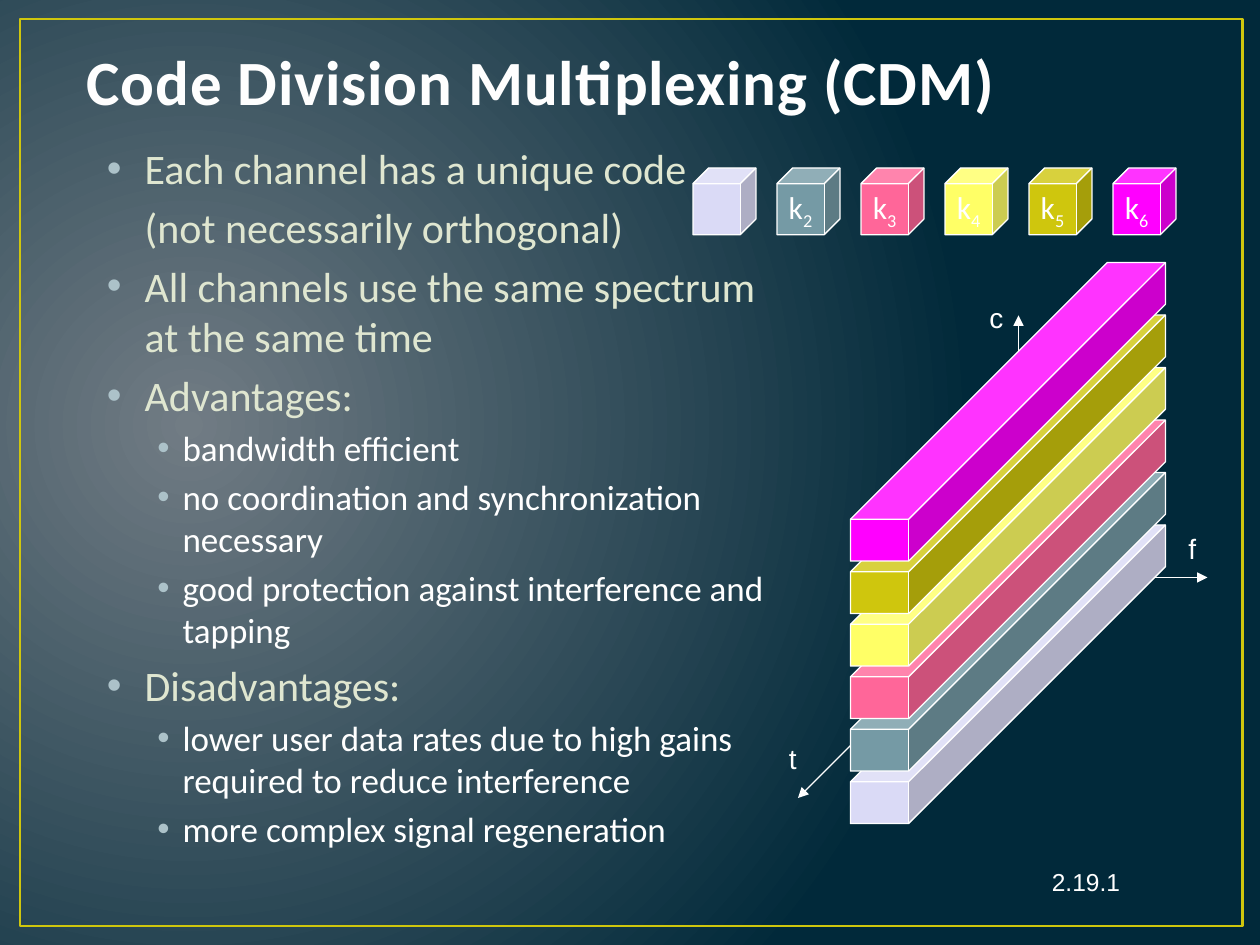
from pptx import Presentation
from pptx.dml.color import RGBColor
from pptx.enum.shapes import MSO_CONNECTOR, MSO_SHAPE
from pptx.enum.text import MSO_ANCHOR, MSO_AUTO_SIZE, PP_ALIGN
from pptx.oxml.ns import qn
from pptx.util import Inches, Pt
from lxml.etree import SubElement

WHITE, GOLD, PALE = "FFFFFF", "CFC60D", "DFE6D0"
CHANNELS = ["DADAF6", "759AA5", "FF6699", "FFFF66", GOLD, "FF00FF"]
# (level, bulleted, text)
POINTS = [
    (0, True, "Each channel has a unique code"),
    (0, False, "(not necessarily orthogonal)"),
    (0, True, "All channels use the same spectrum at the same time"),
    (0, True, "Advantages:"),
    (1, True, "bandwidth efficient"),
    (1, True, "no coordination and synchronization necessary"),
    (1, True, "good protection against interference and tapping"),
    (0, True, "Disadvantages:"),
    (1, True, "lower user data rates due to high gains required to reduce interference"),
    (1, True, "more complex signal regeneration"),
]
# (indent, hanging, size, colour) for each level
LEVELS = [(0.3, 0.3, 24, PALE), (0.6, 0.2, 20, WHITE)]


def color(value):
    return RGBColor.from_string(value)


def set_font(font, name, size, value):
    font.name, font.size = name, Pt(size)
    font.color.rgb = color(value)


def add_background(page):
    fill = page.background.fill
    fill.gradient()
    for stop, value in zip(fill.gradient_stops, ("717C84", "01293A")):
        stop.color.rgb = color(value)
    gradient = next(page.element.iter(qn("a:gradFill")))
    gradient.remove(gradient.find(qn("a:lin")))
    circle = SubElement(gradient, qn("a:path"), path="circle")
    SubElement(circle, qn("a:fillToRect"), l="15000", t="50000", r="85000", b="60000")


def add_frame(page, left, top, width, height):
    frame = page.shapes.add_shape(MSO_SHAPE.RECTANGLE, Inches(left), Inches(top),
                                  Inches(width), Inches(height))
    frame.shadow.inherit = False
    frame.fill.background()
    frame.line.color.rgb = color(GOLD)
    frame.line.width = Pt(1.5)


def add_title(page, left, top, width, height):
    box = page.shapes.add_textbox(Inches(left), Inches(top), Inches(width), Inches(height))
    box.text_frame.word_wrap = True
    box.text_frame.vertical_anchor = MSO_ANCHOR.BOTTOM
    para = box.text_frame.paragraphs[0]
    span = para.add_run()
    span.text = "Code Division Multiplexing (CDM)"
    set_font(span.font, "Calibri", 36, "FEFEFE")
    span.font.bold = True
    span.font._element.set("spc", "50")


def add_points(page, left, top, width, height):
    box = page.shapes.add_textbox(Inches(left), Inches(top), Inches(width), Inches(height))
    frame = box.text_frame
    frame.word_wrap = True
    for index, (level, bulleted, text) in enumerate(POINTS):
        para = frame.add_paragraph() if index else frame.paragraphs[0]
        indent, hanging, size, value = LEVELS[level]
        para.text, para.level = text, level
        if index:
            para.space_before = Pt(0.2 * size)
        props = para._p.get_or_add_pPr()
        props.set("marL", str(Inches(indent)))
        props.set("indent", str(-Inches(hanging) if bulleted else 0))
        if bulleted:
            bullet_color = SubElement(props, qn("a:buClr"))
            SubElement(bullet_color, qn("a:srgbClr"), val="ACC2C9")
            SubElement(props, qn("a:buFont"), typeface="Arial")
            SubElement(props, qn("a:buChar"), char="•")
        set_font(para.font, "Calibri", size, value)


def add_label(page, text, left, top, width, height, size):
    box = page.shapes.add_textbox(Inches(left), Inches(top), Inches(width), Inches(height))
    box.text_frame.word_wrap = False
    box.text_frame.auto_size = MSO_AUTO_SIZE.SHAPE_TO_FIT_TEXT
    para = box.text_frame.paragraphs[0]
    para.text = text
    set_font(para.font, "Arial", size, WHITE)


def add_axes(page, left, top):
    """Code, frequency and time axes meeting at (left, top)."""
    axes = [("t", -1.75, 1.75, -1.92, 1.25, 0.26),
            ("c", 0, -2.08, -0.33, -2.25, 0.31),
            ("f", 1.5, 0, 1.25, -0.41, 0.26)]
    for name, across, down, label_across, label_down, label_width in axes:
        axis = page.shapes.add_connector(MSO_CONNECTOR.STRAIGHT, Inches(left), Inches(top),
                                         Inches(left + across), Inches(top + down))
        axis.line.color.rgb = color(WHITE)
        axis.line.width = Pt(0.75)
        SubElement(axis.line._get_or_add_ln(), qn("a:tailEnd"), type="triangle")
        SubElement(axis._element.spPr, qn("a:effectLst"))
        add_label(page, name, left + label_across, top + label_down, label_width, 0.37, 16)


def add_cube(page, left, top, width, height, depth, value):
    cube = page.shapes.add_shape(MSO_SHAPE.CUBE, Inches(left), Inches(top),
                                 Inches(width), Inches(height))
    cube.adjustments[0] = depth
    cube.shadow.inherit = False
    cube.fill.solid()
    cube.fill.fore_color.rgb = color(value)
    cube.line.color.rgb = color(WHITE)
    cube.line.width = Pt(0.75)
    return cube


def add_channel_stack(page, left, bottom_top, width, height):
    """One long bar per channel, stacked upwards."""
    for index, value in enumerate(CHANNELS):
        add_cube(page, left, bottom_top - index * 5 / 12, width, height, 0.86, value)


def add_code_row(page, left, top, width, height):
    """One small cube per channel; all but the palest carry their code."""
    for index, value in enumerate(CHANNELS):
        cube = add_cube(page, left + index * 2 / 3, top, width, height, 0.25, value)
        if index == 0:
            continue
        cube.text_frame.word_wrap = False
        cube.text_frame.vertical_anchor = MSO_ANCHOR.MIDDLE
        para = cube.text_frame.paragraphs[0]
        para.alignment = PP_ALIGN.CENTER
        set_font(para.font, "Calibri", 18, WHITE)
        para.add_run().text = "k"
        subscript = para.add_run()
        subscript.text = str(index + 1)
        subscript.font._element.set("baseline", "-25000")


def main():
    deck = Presentation()
    deck.slide_width, deck.slide_height = Inches(10), Inches(7.5)
    page = deck.slides.add_slide(deck.slide_layouts[6])
    add_background(page)
    add_frame(page, 0.16, 0.15, 9.7, 7.2)
    add_axes(page, 97 / 12, 55 / 12)
    add_title(page, 0.59, 0.28, 9, 0.71)
    add_points(page, 0.75, 13 / 12, 5.42, 5.58)
    add_label(page, "2.19.1", 8.25, 6.83, 0.74, 0.33, 14)
    add_channel_stack(page, 6.75, 25 / 6, 2.5, 2.37)
    add_code_row(page, 5.5, 4 / 3, 0.5, 0.53)
    deck.save("out.pptx")


if __name__ == "__main__":
    main()
